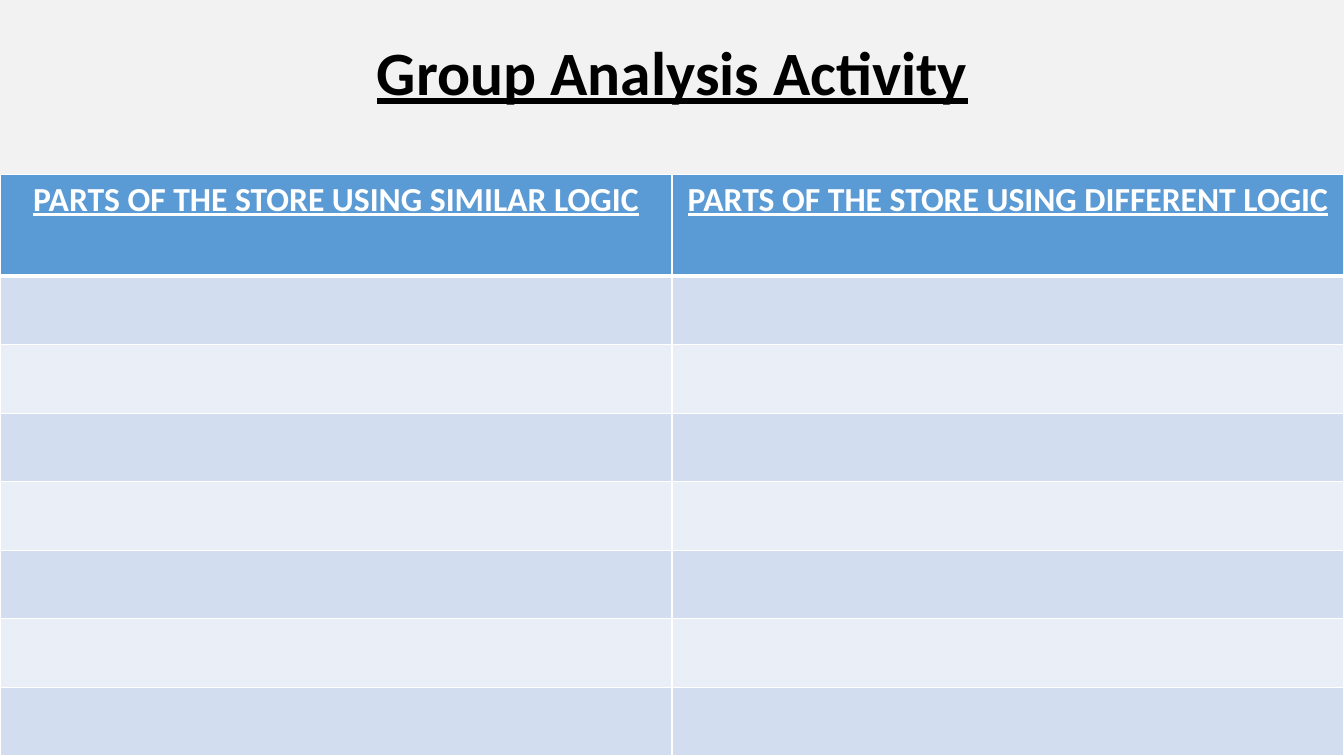
from lxml.etree import SubElement
from pptx import Presentation
from pptx.dml.color import RGBColor
from pptx.enum.text import MSO_ANCHOR, MSO_AUTO_SIZE, PP_ALIGN
from pptx.oxml.ns import qn
from pptx.util import Inches, Pt

FONT = "Calibri"
TITLE_ONLY_LAYOUT = 5
SLIDE_WIDTH = 13.33
HEADERS = [
    "PARTS OF THE STORE USING SIMILAR LOGIC",
    "PARTS OF THE STORE USING DIFFERENT LOGIC",
]
EMPTY_ROWS = 7
HEADER_HEIGHT, ROW_HEIGHT = 1.01, 0.68
HEADER_FILL = "5B9BD5"
BAND_FILLS = ["D2DEEF", "EAEFF7"]
BORDER_COLOR = "FFFFFF"


def color(hex_string):
    return RGBColor.from_string(hex_string)


def format_heading(paragraph, size, hex_string):
    paragraph.alignment = PP_ALIGN.CENTER
    for run in paragraph.runs:
        run.font.name = FONT
        run.font.size = Pt(size)
        run.font.bold = True
        run.font.underline = True
        run.font.color.rgb = color(hex_string)


def add_title(slide, text):
    title = slide.shapes.title
    title.left, title.top = Inches(0.92), Inches(0.02)
    title.width, title.height = Inches(11.5), Inches(1.45)
    text_frame = title.text_frame
    text_frame.text = text
    text_frame.auto_size = MSO_AUTO_SIZE.NONE
    text_frame.vertical_anchor = MSO_ANCHOR.MIDDLE
    paragraph = text_frame.paragraphs[0]
    paragraph.line_spacing = 0.9
    format_heading(paragraph, 44, "000000")


def style_cell(cell, fill, top=1, bottom=1):
    # Borders come before the fill in the cell properties
    properties = cell._tc.get_or_add_tcPr()
    for side, width in (("L", 1), ("R", 1), ("T", top), ("B", bottom)):
        line = SubElement(properties, qn(f"a:ln{side}"), w=str(Pt(width)))
        solid = SubElement(line, qn("a:solidFill"))
        SubElement(solid, qn("a:srgbClr"), val=BORDER_COLOR)
    cell.fill.solid()
    cell.fill.fore_color.rgb = color(fill)


def add_comparison_table(slide):
    height = HEADER_HEIGHT + EMPTY_ROWS * ROW_HEIGHT
    table = slide.shapes.add_table(
        EMPTY_ROWS + 1, len(HEADERS),
        Inches(0), Inches(1.73), Inches(SLIDE_WIDTH), Inches(height),
    ).table
    for column in table.columns:
        column.width = Inches(SLIDE_WIDTH / len(HEADERS))

    # Header row
    table.rows[0].height = Inches(HEADER_HEIGHT)
    for cell, header in zip(table.rows[0].cells, HEADERS):
        cell.text_frame.text = header
        format_heading(cell.text_frame.paragraphs[0], 24, "FFFFFF")
        style_cell(cell, HEADER_FILL, bottom=3)

    # Banded rows left blank for the groups' answers
    for index in range(EMPTY_ROWS):
        row = table.rows[index + 1]
        row.height = Inches(ROW_HEIGHT)
        for cell in row.cells:
            style_cell(cell, BAND_FILLS[index % 2], top=3 if index == 0 else 1)


def main():
    presentation = Presentation()
    presentation.slide_width = Inches(SLIDE_WIDTH)
    presentation.slide_height = Inches(7.5)
    slide = presentation.slides.add_slide(
        presentation.slide_layouts[TITLE_ONLY_LAYOUT])
    slide.background.fill.solid()
    slide.background.fill.fore_color.rgb = color("F2F2F2")

    add_title(slide, "Group Analysis Activity")
    add_comparison_table(slide)
    presentation.save("out.pptx")


if __name__ == "__main__":
    main()
